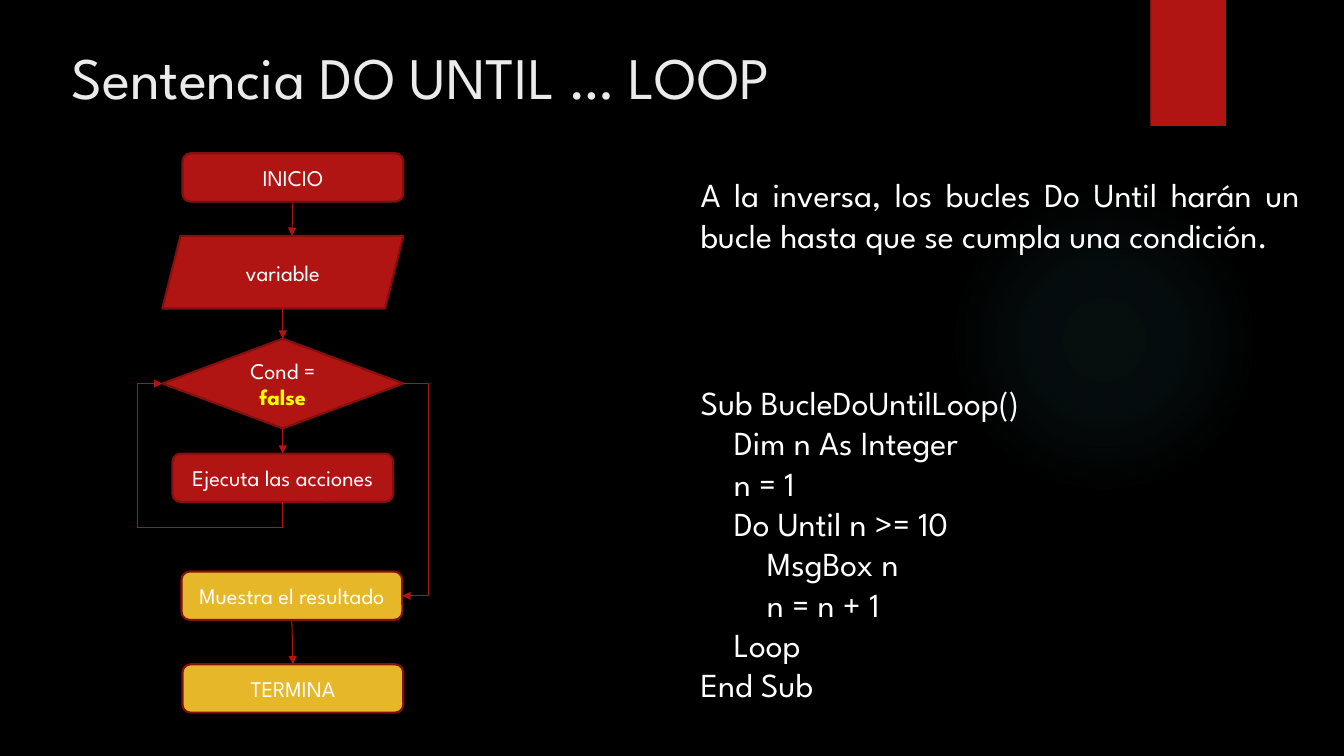
import lxml.etree
import pptx
import pptx.dml.color
import pptx.enum.shapes
import pptx.enum.text
import pptx.oxml
import pptx.oxml.ns
import pptx.util

Inches = pptx.util.Inches
SHAPES = pptx.enum.shapes.MSO_SHAPE
CONNECTORS = pptx.enum.shapes.MSO_CONNECTOR
ALIGN = pptx.enum.text.PP_ALIGN
ANCHOR = pptx.enum.text.MSO_ANCHOR
qn = pptx.oxml.ns.qn

FONT = "League Spartan"
RED, DARK_RED, GOLD = "B01513", "82100E", "E6B729"
WHITE, TITLE_GREY, YELLOW, GLOW = "FFFFFF", "EBEBEB", "FFFF00", "50B9C1"

CODE = """Sub BucleDoUntilLoop()
    Dim n As Integer
    n = 1
    Do Until n >= 10
        MsgBox n
        n = n + 1
    Loop
End Sub"""


def color(hex_value):
    return pptx.dml.color.RGBColor.from_string(hex_value)


def add_run(paragraph, text, size=16, fill=WHITE, bold=False):
    run = paragraph.add_run()
    run.text = text
    run.font.name = FONT
    run.font.size = pptx.util.Pt(size)
    run.font.bold = bold
    run.font.color.rgb = color(fill)


def write_text(shape, text, align=ALIGN.LEFT, anchor=ANCHOR.TOP, **run_format):
    frame = shape.text_frame
    frame.word_wrap = True
    frame.vertical_anchor = anchor
    for index, line in enumerate(text.split("\n")):
        paragraph = frame.add_paragraph() if index else frame.paragraphs[0]
        paragraph.alignment = align
        add_run(paragraph, line, **run_format)
    return frame


def add_text(slide, box, text, **text_format):
    textbox = slide.shapes.add_textbox(*map(Inches, box))
    return write_text(textbox, text, **text_format)


def add_plain_shape(slide, kind, box, fill):
    shape = slide.shapes.add_shape(kind, *map(Inches, box))
    shape.shadow.inherit = False
    shape.fill.solid()
    shape.fill.fore_color.rgb = color(fill)
    shape.line.fill.background()
    return shape


def add_flow_node(slide, kind, box, text, fill=RED):
    node = add_plain_shape(slide, kind, box, fill)
    node.line.color.rgb = color(DARK_RED)
    node.line.width = pptx.util.Pt(1.5)
    return write_text(node, text, align=ALIGN.CENTER, anchor=ANCHOR.MIDDLE)


def add_arrow(slide, start, end, kind=CONNECTORS.STRAIGHT):
    arrow = slide.shapes.add_connector(kind, *map(Inches, (*start, *end)))
    arrow.line.color.rgb = color(RED)
    arrow.line.width = pptx.util.Pt(0.75)
    properties = arrow._element.spPr
    line = properties.find(qn("a:ln"))
    lxml.etree.SubElement(line, qn("a:tailEnd"), type="triangle")
    lxml.etree.SubElement(properties, qn("a:effectLst"))
    return arrow


def add_bent_arrow(slide, start, end, preset, bends, rotation=0):
    """Bends are fractions of the connector's width, then of its height."""
    arrow = add_arrow(slide, start, end, CONNECTORS.ELBOW)
    properties = arrow._element.spPr
    properties.find(qn("a:xfrm")).set("rot", str(rotation * 60000))
    geometry = properties.find(qn("a:prstGeom"))
    geometry.set("prst", preset)
    guides = geometry.get_or_add_avLst()
    for number, bend in enumerate(bends, 1):
        lxml.etree.SubElement(guides, qn("a:gd"), name=f"adj{number}",
                              fmla=f"val {round(bend * 100000)}")


def add_glow(slide, box):
    glow = add_plain_shape(slide, SHAPES.OVAL, box, GLOW)
    stops = "".join(
        f'<a:gs pos="{position * 1000}"><a:srgbClr val="{GLOW}">'
        f'<a:alpha val="{alpha * 1000}"/></a:srgbClr></a:gs>'
        for position, alpha in ((0, 7), (36, 6), (69, 0)))
    gradient = pptx.oxml.parse_xml(
        f'<a:gradFill {pptx.oxml.ns.nsdecls("a")} rotWithShape="1">'
        f'<a:gsLst>{stops}</a:gsLst><a:path path="circle">'
        '<a:fillToRect l="50000" t="50000" r="50000" b="50000"/>'
        '</a:path></a:gradFill>')
    properties = glow._element.spPr
    properties.replace(properties.find(qn("a:solidFill")), gradient)


def add_background(slide):
    slide.background.fill.solid()
    slide.background.fill.fore_color.rgb = color("000000")
    add_glow(slide, (9.41, 1.83, 3.08, 3.08))
    add_plain_shape(slide, SHAPES.RECTANGLE, (11.41, 0, 0.75, 1.25), RED)


def add_explanation(slide, left, top, width):
    body = {"align": ALIGN.JUSTIFY, "size": 24}
    add_text(slide, (left, top, width, 1.31),
             "A la inversa, los bucles Do Until harán un bucle hasta que "
             "se cumpla una condición.", **body)
    add_text(slide, (left, top + 2.06, width, 3.33), CODE, **body)


def add_flowchart(slide, left, top):
    width, box_width, box_height = 2.39, 2.19, 0.48
    right, middle = left + width, left + width / 2
    input_top, condition_top, action_top = top + 0.82, top + 1.84, top + 2.98
    result_top, finish_top = top + 4.15, top + 5.07
    input_height, condition_height = 0.72, 0.89
    condition_middle = condition_top + condition_height / 2
    condition_bottom = condition_top + condition_height
    action_bottom = action_top + box_height
    result_middle = result_top + box_height / 2

    # Nodes
    for x, y, text, fill in (
            (left + 0.2, top, "INICIO", RED),
            (left + 0.1, action_top, "Ejecuta las acciones", RED),
            (left + 0.19, result_top, "Muestra el resultado", GOLD),
            (left + 0.2, finish_top, "TERMINA", GOLD)):
        add_flow_node(slide, SHAPES.FLOWCHART_ALTERNATE_PROCESS,
                      (x, y, box_width, box_height), text, fill)
    add_flow_node(slide, SHAPES.PARALLELOGRAM,
                  (left, input_top, width, input_height), "variable")
    condition = add_flow_node(slide, SHAPES.DIAMOND,
                              (left, condition_top, width, condition_height),
                              "Cond = ")
    add_run(condition.paragraphs[0], "false", fill=YELLOW, bold=True)

    # Straight arrows between nodes
    for start, end in (
            ((middle + 0.1, top + box_height), (middle + 0.09, input_top)),
            ((middle, input_top + input_height), (middle, condition_top)),
            ((middle, condition_bottom), (middle, action_top)),
            ((middle + 0.09, result_top + box_height),
             (middle + 0.1, finish_top))):
        add_arrow(slide, start, end)

    # Loop back to the condition: drawn lying down, then turned a quarter
    rise, run = action_bottom - condition_middle, middle - left
    center_x = (left + middle) / 2
    center_y = (condition_middle + action_bottom) / 2
    add_bent_arrow(slide, (center_x + rise / 2, center_y - run / 2),
                   (center_x - rise / 2, center_y + run / 2),
                   "bentConnector4", (-0.25 / rise, 1 + 0.25 / run), 90)

    # Exit from the condition to the result
    add_bent_arrow(slide, (right, condition_middle),
                   (right - 0.01, result_middle), "bentConnector3", (-25,))


def main():
    presentation = pptx.Presentation()
    presentation.slide_width = Inches(13.33)
    presentation.slide_height = Inches(7.5)
    slide = presentation.slides.add_slide(presentation.slide_layouts[6])
    add_background(slide)
    add_text(slide, (0.61, 0.35, 10.29, 1.53), "Sentencia DO UNTIL … LOOP",
             size=42, fill=TITLE_GREY)
    add_explanation(slide, 6.85, 1.68, 6.14)
    add_flowchart(slide, 1.61, 1.52)
    presentation.save("out.pptx")


if __name__ == "__main__":
    main()
